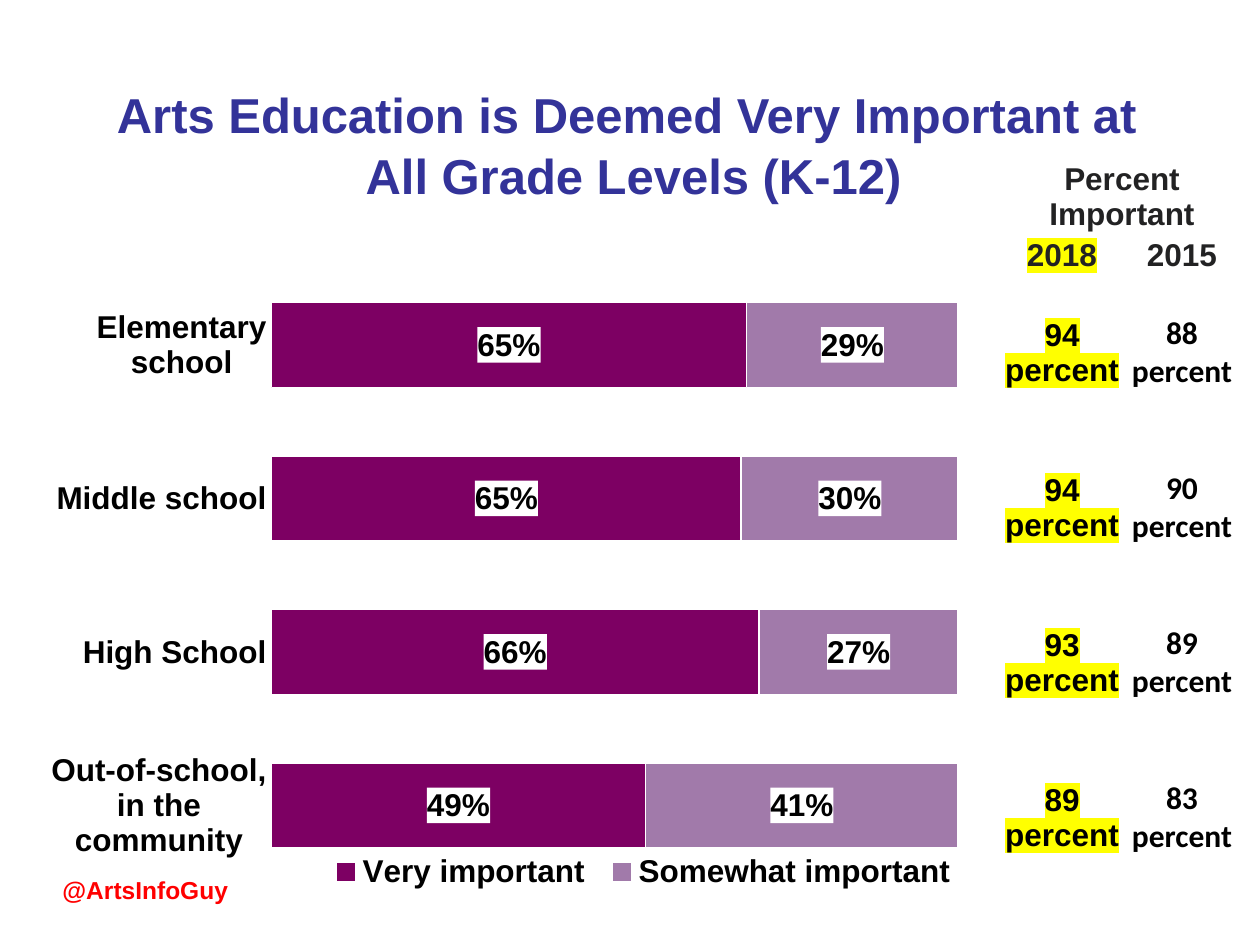
"""Build the arts education slide: stacked bars by grade level beside a table of totals."""
from pptx import Presentation
from pptx.chart.data import CategoryChartData
from pptx.dml.color import RGBColor
from pptx.enum.chart import XL_CHART_TYPE, XL_LABEL_POSITION, XL_LEGEND_POSITION, XL_TICK_MARK
from pptx.enum.text import MSO_ANCHOR, PP_ALIGN
from pptx.oxml import parse_xml
from pptx.oxml.ns import nsdecls
from pptx.util import Pt

PX = 914400 // 126
THEME = {
    "title": {"size": 28, "color": "333399", "name": "Arial"},
    "head": {"size": 18, "color": "222223", "name": "Arial"},
    "now": {"size": 18, "color": "000000", "name": "Arial"},
    "past": {"size": 18, "color": "000000", "name": "Calibri"},
    "handle": {"size": 14, "color": "FF0000", "name": "Arial"},
    "mark": "FFFF00",
    "edge": "FFFFFF",
    "bars": ["7D0063", "A17AAA"],
}


def style(font, key, mark=False):
    look = THEME[key]
    font.size, font.bold = Pt(look["size"]), True
    font.color.rgb = RGBColor.from_string(look["color"])
    if mark:
        font._element.append(parse_xml(
            f'<a:highlight {nsdecls("a")}><a:srgbClr val="{THEME["mark"]}"/></a:highlight>'))
    font.name = look["name"]


def place(node, index, inner, **parts):
    for old in node.xpath("c:layout"):
        node.remove(old)
    modes = "".join(f'<c:{k}Mode val="edge"/>' for k in "xy")
    sizes = "".join(f'<c:{k} val="{v}"/>' for k, v in parts.items())
    node.insert(index, parse_xml(
        f'<c:layout {nsdecls("c")}><c:manualLayout>{inner}{modes}{sizes}'
        '</c:manualLayout></c:layout>'))


deck = Presentation()
deck.slide_width, deck.slide_height = 1260 * PX, 945 * PX
slide = deck.slides.add_slide(deck.slide_layouts[6])
shapes = slide.shapes

frame = shapes.add_textbox(18 * PX, 71 * PX, 1231 * PX, 144 * PX).text_frame
frame.word_wrap = True
frame.vertical_anchor = MSO_ANCHOR.MIDDLE
frame.text = "Arts Education is Deemed Very Important at \nAll Grade Levels (K-12)"
for para in frame.paragraphs:
    para.alignment = PP_ALIGN.CENTER
    para.line_spacing = 1.05
    style(para.runs[0].font, "title")

data = CategoryChartData(number_format="0%")
data.categories = ["Elementary school", "Middle school", "High School",
                   "Out-of-school, in the community"]
data.add_series("Very important", [0.65, 0.65, 0.66, 0.49])
data.add_series("Somewhat important", [0.29, 0.3, 0.27, 0.41])
chart = shapes.add_chart(XL_CHART_TYPE.BAR_STACKED_100, 33 * PX, 213 * PX,
                         954 * PX, 690 * PX, data).chart
style(chart.font, "now")
chart.has_title = False
chart.has_legend = True
legend = chart.legend
legend.position = XL_LEGEND_POSITION.TOP
legend.include_in_layout = False
style(legend.font, "now")
place(legend._element, 1, "", x=0.3, y=0.92, w=0.68, h=0.07)
place(chart._chartSpace.chart.plotArea, 0, '<c:layoutTarget val="inner"/>',
      x=0.25, y=0.08, w=0.72, h=0.89)

groups = chart.category_axis
for name, value in {"reverse_order": True, "major_tick_mark": XL_TICK_MARK.NONE,
                    "minor_tick_mark": XL_TICK_MARK.NONE}.items():
    setattr(groups, name, value)
groups.format.line.fill.background()
for name, value in {"visible": False, "has_major_gridlines": False, "minimum_scale": 0,
                    "maximum_scale": 1, "major_unit": 0.25}.items():
    setattr(chart.value_axis, name, value)

plot = chart.plots[0]
for name, value in {"gap_width": 80, "overlap": 100, "vary_by_categories": False}.items():
    setattr(plot, name, value)
for series, color in zip(plot.series, THEME["bars"]):
    series.format.fill.solid()
    series.format.fill.fore_color.rgb = RGBColor.from_string(color)
    series.format.line.color.rgb = RGBColor.from_string(THEME["edge"])
    series.format.line.width = Pt(1)
    labels = series.data_labels
    for name, value in {"show_value": True, "position": XL_LABEL_POSITION.CENTER,
                        "number_format": "0%", "number_format_is_linked": False}.items():
        setattr(labels, name, value)
    style(labels.font, "now")
    labels._element.xpath("c:txPr")[0].addprevious(parse_xml(
        f'<c:spPr {nsdecls("c", "a")}><a:solidFill><a:srgbClr val="{THEME["edge"]}"/>'
        '</a:solidFill></c:spPr>'))

rows = [("Percent Important", ""), ("2018", "2015")]
rows += [(f"{now} percent", f"{past} percent")
         for now, past in [(94, 88), (94, 90), (93, 89), (89, 83)]]
table = shapes.add_table(len(rows), 2, 1002 * PX, 158 * PX, 239 * PX, 740 * PX).table
table.first_row = table.horz_banding = False
table.cell(0, 0).merge(table.cell(0, 1))
for col in table.columns:
    col.width = 120 * PX
for r, row in enumerate(rows):
    table.rows[r].height = (64, 34)[r] * PX if r < 2 else 155 * PX
    for c, text in enumerate(row):
        cell = table.cell(r, c)
        cell.fill.background()
        for side in ("left", "right", "top", "bottom"):
            setattr(cell, f"margin_{side}", PX)
        cell.vertical_anchor = MSO_ANCHOR.MIDDLE
        para = cell.text_frame.paragraphs[0]
        para.alignment = PP_ALIGN.CENTER
        if text:
            run = para.add_run()
            run.text = text
            style(run.font, "head" if r < 2 else ("now", "past")[c], r > 0 and c == 0)

frame = shapes.add_textbox(50 * PX, 869 * PX, 192 * PX, 43 * PX).text_frame
frame.word_wrap = False
frame.text = "@ArtsInfoGuy"
style(frame.paragraphs[0].runs[0].font, "handle")

deck.save("out.pptx")
